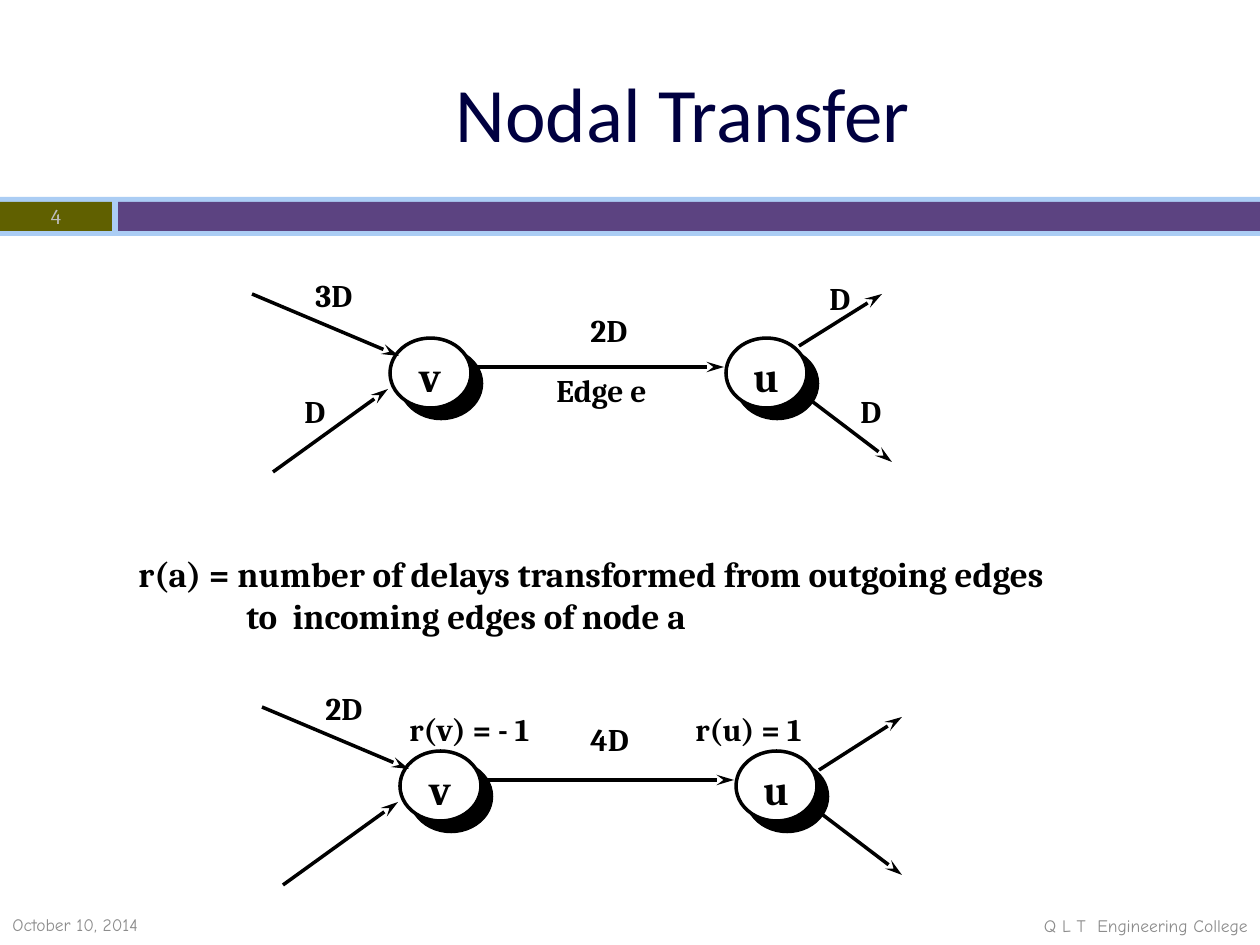
"""Build the Nodal Transfer slide with two data-flow graphs."""
from lxml.etree import SubElement
from pptx import Presentation
from pptx.dml.color import RGBColor
from pptx.enum.shapes import MSO_CONNECTOR, MSO_SHAPE
from pptx.enum.text import MSO_ANCHOR, PP_ALIGN
from pptx.oxml.ns import qn
from pptx.util import Emu, Pt

PX = 914400 / 126
COLORS = {
    "black": "000000", "white": "FFFFFF", "title": "000040",
    "band": "ABCDF4", "olive": "606000", "purple": "5C4381",
    "footer": "8C8C8C", "number": "BDBDBD",
}


def px(*values):
    return [Emu(round(v * PX)) for v in values]


def add_text(box, lines, size, color="black", font="Cambria", bold=True,
             align=PP_ALIGN.LEFT, anchor=MSO_ANCHOR.TOP, wrap=False):
    tb = slide.shapes.add_textbox(*px(*box))
    tf = tb.text_frame
    tf.word_wrap = wrap
    tf.vertical_anchor = anchor
    tf.text = lines
    for p in tf.paragraphs:
        p.alignment = align
        f = p.runs[0].font
        f.name, f.size, f.bold = font, Pt(size), bold
        f.color.rgb = RGBColor.from_string(COLORS[color])
    return tf


prs = Presentation()
prs.slide_width, prs.slide_height = px(1260, 945)
slide = prs.slides.add_slide(prs.slide_layouts[5])
black = RGBColor.from_string(COLORS["black"])

for box, color in [((0, 197, 1260, 39), "band"), ((0, 202, 112, 29), "olive"),
                   ((118, 202, 1142, 29), "purple")]:
    sp = slide.shapes.add_shape(MSO_SHAPE.RECTANGLE, *px(*box))
    sp.shadow.inherit = False
    sp.fill.solid()
    sp.fill.fore_color.rgb = RGBColor.from_string(COLORS[color])
    sp.line.fill.background()

title = slide.shapes.title
title.left, title.top, title.width, title.height = px(116, 39, 1134, 158)
title.text_frame.text = "Nodal Transfer"
title.text_frame.vertical_anchor = MSO_ANCHOR.MIDDLE
p = title.text_frame.paragraphs[0]
p.alignment = PP_ALIGN.CENTER
p.line_spacing = 0.9
f = p.runs[0].font
f.name, f.size = "Calibri", Pt(44)
f.color.rgb = RGBColor.from_string(COLORS["title"])

edges = [(252, 294, 399, 356), (273, 472, 388, 389),
         (472, 367, 724, 367), (809, 399, 892, 462)]
graphs = [(0, 0, (799, 346, 882, 294)), (10, 413, (809, 357, 892, 304))]
for dx, dy, upper_edge in graphs:
    for name, x in [("v", 390), ("u", 726)]:
        sp = slide.shapes.add_shape(MSO_SHAPE.OVAL, *px(x + dx, 338 + dy, 81, 70))
        sp.fill.solid()
        sp.fill.fore_color.rgb = RGBColor.from_string(COLORS["white"])
        sp.line.color.rgb = black
        sp.line.width = Pt(2)
        sp.shadow.inherit = False
        effects = sp._element.spPr.find(qn("a:effectLst"))
        shadow = SubElement(effects, qn("a:outerShdw"), dist=str(Pt(8.5)),
                            dir=str(45 * 60000), algn="ctr", rotWithShape="0")
        SubElement(shadow, qn("a:srgbClr"), val=COLORS["black"])
        add_text((x + dx + 15, 344 + dy, 50, 63), name, 24, align=PP_ALIGN.CENTER)

    for x1, y1, x2, y2 in edges + [upper_edge]:
        line = slide.shapes.add_connector(
            MSO_CONNECTOR.STRAIGHT, *px(x1 + dx, y1 + dy, x2 + dx, y2 + dy))
        line.line.color.rgb = black
        line.line.width = Pt(2)
        spPr = line._element.spPr
        SubElement(spPr.get_or_add_ln(), qn("a:tailEnd"), type="stealth", len="lg")
        SubElement(spPr, qn("a:effectLst"))

labels = [
    ("3D", 303, 270, 66), ("D", 292, 386, 48), ("2D", 578, 305, 66),
    ("Edge e", 544, 365, 129), ("D", 817, 273, 48), ("D", 848, 386, 48),
    ("2D", 313, 683, 66), ("4D", 578, 714, 66),
    ("r(v) = - 1", 397, 704, 146), ("r(u) = 1", 683, 704, 132),
]
for text, x, y, width in labels:
    add_text((x, y, width, 50), text, 18)

tf = add_text((126, 546, 1018, 97),
              "r(a) = number of delays transformed from outgoing edges\n"
              "to  incoming edges of node a", 20, wrap=True)
tf.paragraphs[1]._p.get_or_add_pPr().set("marL", str(px(108)[0]))

footers = [
    ((0, 903, 431, 42), "October 10, 2014", 10, "footer", "Comic Neue", PP_ALIGN.LEFT),
    ((0, 197, 112, 39), "4", 12, "number", "Cambria", PP_ALIGN.CENTER),
    ((863, 906, 397, 39), "Q L T  Engineering College", 10, "footer",
     "Comic Neue", PP_ALIGN.RIGHT),
]
for box, text, size, color, font, align in footers:
    add_text(box, text, size, color, font, False, align, MSO_ANCHOR.MIDDLE, True)

prs.save("out.pptx")
